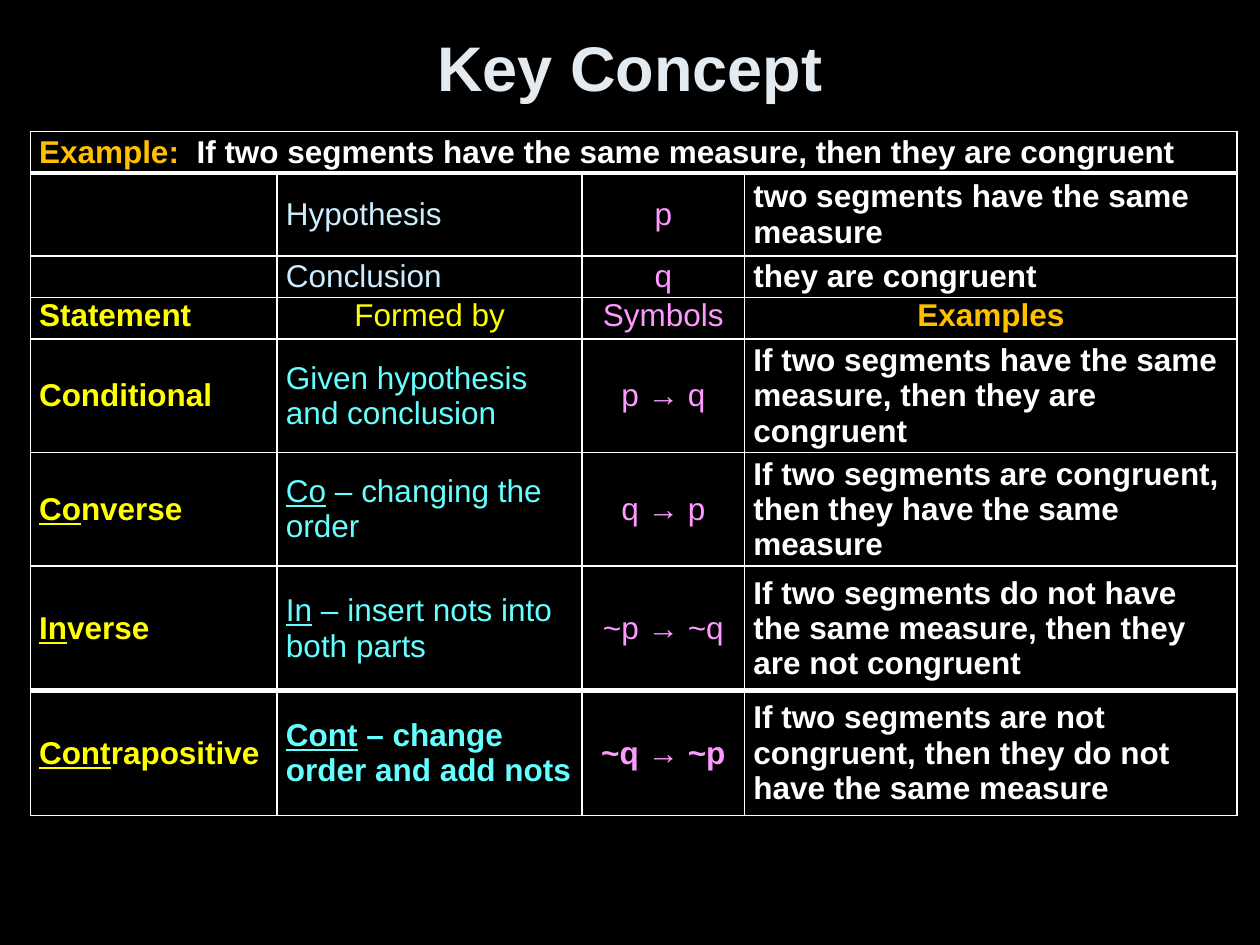
from lxml.etree import SubElement
from pptx import Presentation
from pptx.dml.color import RGBColor
from pptx.enum.text import MSO_ANCHOR, PP_ALIGN
from pptx.oxml.ns import qn
from pptx.util import Inches, Pt

BLACK = RGBColor(0x00, 0x00, 0x00)
WHITE = RGBColor(0xFF, 0xFF, 0xFF)
PALE = RGBColor(0xE3, 0xEB, 0xF1)
GOLD = RGBColor(0xFF, 0xC0, 0x00)
YELLOW = RGBColor(0xFF, 0xFF, 0x00)
SKY = RGBColor(0xCC, 0xEC, 0xFF)
CYAN = RGBColor(0x66, 0xFF, 0xFF)
PINK = RGBColor(0xFF, 0x99, 0xFF)

WIDTHS = [1.96, 2.42, 1.29, 3.91]
HEIGHTS = [0.33, 0.66, 0.33, 0.33, 0.66, 0.66, 0.99, 0.99]
HEAD = 3
LAST = len(HEIGHTS) - 1
THICK = {(0, "B"), (1, "T"), (LAST - 1, "B"), (LAST, "T")}
INKS = [YELLOW, CYAN, PINK, WHITE]
TERMS = [YELLOW, SKY, PINK, WHITE]
LABELS = [YELLOW, YELLOW, PINK, GOLD]
CLAIM = "If two segments have the same measure, then they are congruent"
ROWS = [
    ["", "Hypothesis", "p", "two segments have the same measure"],
    ["", "Conclusion", "q", "they are congruent"],
    ["Statement", "Formed by", "Symbols", "Examples"],
    ["Conditional", "Given hypothesis and conclusion", "p → q", CLAIM],
    ["_Co_nverse", "_Co_ – changing the order", "q → p",
     "If two segments are congruent, then they have the same measure"],
    ["_In_verse", "_In_ – insert nots into both parts", "~p → ~q",
     "If two segments do not have the same measure, then they are not congruent"],
    ["_Cont_rapositive", "_Cont_ – change order and add nots", "~q → ~p",
     "If two segments are not congruent, then they do not have the same measure"],
]


class Deck:
    """Hold the style and current slide, and draw each kind of element."""

    def __init__(self, face="Arial"):
        self.face = face
        self.show = Presentation()
        self.show.slide_width, self.show.slide_height = Inches(10), Inches(7.5)
        self.slide = self.show.slides.add_slide(self.show.slide_layouts[6])
        self.slide.background.fill.solid()
        self.slide.background.fill.fore_color.rgb = BLACK

    def place(self, x, y, w, h):
        wide, high = self.show.slide_width, self.show.slide_height
        return int(x * wide), int(y * high), int(w * wide), int(h * high)

    def label(self, frame, text, ink, size=18, bold=True, align=PP_ALIGN.LEFT):
        para = frame.paragraphs[0]
        para.alignment = align
        font = para.font
        font.name, font.size, font.bold = self.face, Pt(size), bold
        font.color.rgb = ink
        for i, part in enumerate(text.split("_")):
            if part:
                run = para.add_run()
                run.text = part
                if i % 2:
                    run.font.underline = True
        return para

    def title(self, text, box):
        frame = self.slide.shapes.add_textbox(*self.place(*box)).text_frame
        frame.word_wrap = True
        frame.vertical_anchor = MSO_ANCHOR.MIDDLE
        self.label(frame, text, PALE, 36, align=PP_ALIGN.CENTER)

    def table(self, box, widths, heights):
        shape = self.slide.shapes.add_table(len(heights), len(widths), *self.place(*box))
        grid = shape.table
        grid.first_row = grid.horz_banding = False
        for col, width in zip(grid.columns, widths):
            col.width = Inches(width)
        for row, height in zip(grid.rows, heights):
            row.height = Inches(height)
        shape.height = self.place(*box)[3]
        for r, row in enumerate(grid.rows):
            for cell in row.cells:
                self.frame(cell, r)
        return grid

    def frame(self, cell, r):
        cell.margin_left = cell.margin_right = Inches(0.07)
        cell.margin_top = cell.margin_bottom = 0
        cell.vertical_anchor = MSO_ANCHOR.TOP if r == HEAD else MSO_ANCHOR.MIDDLE
        for side in "LRTB":
            width = Pt(3 if (r, side) in THICK else 1)
            line = SubElement(cell._tc.get_or_add_tcPr(), qn(f"a:ln{side}"), w=str(width))
            fill = SubElement(line, qn("a:solidFill"))
            SubElement(fill, qn("a:srgbClr"), val=str(WHITE))
        cell.fill.background()


def main():
    deck = Deck()
    deck.title("Key Concept", (0.05, 0.01, 0.9, 0.12))
    grid = deck.table((0.024, 0.139, 0.957, 0.723), WIDTHS, HEIGHTS)

    top = grid.cell(0, 0)
    top.merge(grid.cell(0, 3))
    para = deck.label(top.text_frame, "Example:  ", GOLD)
    claim = para.add_run()
    claim.text = CLAIM
    claim.font.color.rgb = WHITE

    for r, texts in enumerate(ROWS, 1):
        inks = TERMS if r < HEAD else LABELS if r == HEAD else INKS
        for c, (text, ink) in enumerate(zip(texts, inks)):
            bold = c in (0, 3) or r == LAST
            mid = c == 2 or (r == HEAD and c > 0)
            align = PP_ALIGN.CENTER if mid else PP_ALIGN.LEFT
            deck.label(grid.cell(r, c).text_frame, text, ink, bold=bold, align=align)

    deck.show.save("out.pptx")


if __name__ == "__main__":
    main()
